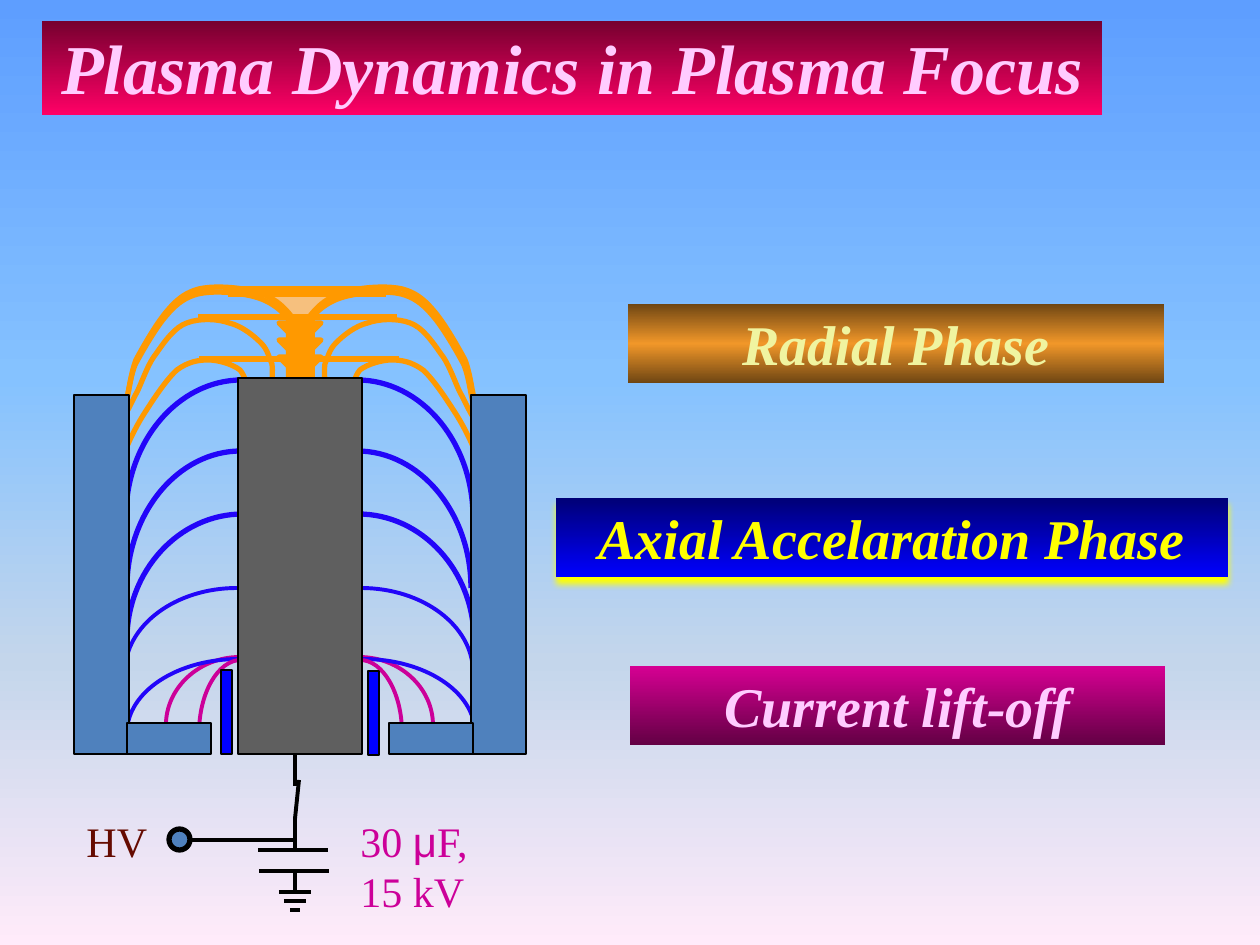
from copy import deepcopy
from dataclasses import dataclass

from lxml import etree
from pptx import Presentation
from pptx.dml.color import RGBColor
from pptx.enum.shapes import MSO_CONNECTOR, MSO_SHAPE
from pptx.enum.text import MSO_ANCHOR, PP_ALIGN
from pptx.oxml.ns import qn
from pptx.util import Emu, Pt

PX = 914400 / 126
RECT, OVAL, TRIANGLE = MSO_SHAPE.RECTANGLE, MSO_SHAPE.OVAL, MSO_SHAPE.ISOSCELES_TRIANGLE
STRAIGHT = MSO_CONNECTOR.STRAIGHT
CENTER, MIDDLE = PP_ALIGN.CENTER, MSO_ANCHOR.MIDDLE


@dataclass(frozen=True)
class Theme:
    font: str = "Times New Roman"
    symbol_font: str = "Arial"
    title_size: int = 40
    label_size: int = 32
    note_size: int = 24
    orange: str = "FF9900"
    pale_orange: str = "F6C07E"
    blue: str = "2205F9"
    magenta: str = "CC0099"
    steel: str = "4F81BD"
    insulator: str = "0000FF"
    anode: str = "5F5F5F"
    black: str = "000000"
    brown: str = "650B01"
    pink: str = "FFCCFF"
    yellow: str = "FFFF00"
    sky: tuple = ((0, "5E9EFF"), (40, "85C2FF"), (70, "C4D6EB"), (100, "FFEBFA"))
    title_fill: tuple = ((0, "76002F"), (100, "FF0066"))


THEME = Theme()


@dataclass(frozen=True)
class Box:
    x: int
    y: int
    w: int
    h: int


@dataclass(frozen=True)
class Sheet:
    """Right half of a plasma sheet; its left half is at mirror - x."""
    points: tuple
    mirror: int
    color: str
    width: float = 3


@dataclass(frozen=True)
class Phase:
    text: str
    box: Box
    color: str
    stops: tuple
    glow: str = ""


def arc(x0: int, x1: int, top: int, bottom: int) -> tuple:
    """Cubic control points of a quarter ellipse."""
    return ((x0, top), (round(x0 + 0.55 * (x1 - x0)), top),
            (x1, round(bottom - 0.55 * (bottom - top))), (x1, bottom))


OUTER = ((306, 325), (311, 318), (318, 310), (326, 305), (335, 299), (345, 296), (358, 294),
         (370, 292), (388, 291), (401, 294), (412, 297), (421, 302), (432, 315),
         (442, 326), (456, 350), (464, 365), (470, 381), (471, 399), (474, 406))
MIDDLE_SHEET = ((325, 386), (325, 378), (324, 372), (325, 364), (328, 358), (329, 350),
                (336, 343), (343, 336), (355, 326), (368, 323), (379, 319), (397, 318),
                (410, 323), (422, 327), (432, 341), (441, 354), (450, 365), (456, 386),
                (462, 396), (467, 406), (470, 412), (473, 417))
INNER = ((350, 401), (352, 389), (354, 377), (360, 370), (368, 364), (382, 360), (392, 360),
         (402, 360), (412, 362), (423, 370), (433, 379), (445, 397), (454, 411),
         (462, 423), (469, 437), (475, 451))
RADIAL_SHEETS = (
    Sheet(OUTER, 599, THEME.orange),
    Sheet(tuple((x + 1, y - 5) for x, y in OUTER), 601, THEME.orange),
    Sheet(MIDDLE_SHEET, 597, THEME.orange),
    Sheet(INNER, 600, THEME.orange),
)
AXIAL_SHEETS = (
    Sheet(arc(357, 471, 451, 588), 598, THEME.blue),
    Sheet(arc(361, 473, 588, 672), 598, THEME.blue, 2.25),
    Sheet(arc(359, 433, 657, 725), 599, THEME.magenta, 2.25),
    Sheet(arc(357, 473, 380, 517), 599, THEME.blue),
    Sheet(arc(358, 474, 514, 640), 601, THEME.blue),
    Sheet(arc(363, 475, 659, 733), 602, THEME.blue, 2.25),
    Sheet(arc(360, 402, 660, 733), 601, THEME.magenta, 2.25),
)
SHEET_TOPS = ((228, 386, 294), (228, 386, 289), (198, 397, 317), (199, 399, 359))
ELECTRODES = (
    (Box(238, 378, 124, 376), THEME.anode),
    (Box(74, 395, 55, 359), THEME.steel),
    (Box(471, 395, 55, 359), THEME.steel),
    (Box(127, 723, 84, 31), THEME.steel),
    (Box(389, 723, 84, 31), THEME.steel),
    (Box(221, 670, 11, 84), THEME.insulator),
    (Box(368, 671, 11, 84), THEME.insulator),
)
CIRCUIT = (
    (295, 754, 295, 786), (295, 819, 295, 850), (258, 850, 328, 850), (259, 871, 329, 871),
    (295, 871, 295, 892), (279, 892, 311, 892), (284, 901, 306, 901), (295, 819, 299, 780),
    (290, 910, 300, 910), (295, 840, 190, 840),
)
PHASES = (
    Phase("Current lift-off", Box(630, 666, 535, 79), THEME.pink,
          ((0, "D60093"), (100, "630044"))),
    Phase("Axial Accelaration Phase", Box(556, 498, 672, 79), THEME.yellow,
          ((0, "000076"), (100, "0000FF")), glow=THEME.yellow),
    Phase("Radial Phase", Box(628, 304, 536, 79), "F0F4A0",
          ((0, "6F4613"), (50, "F19729"), (100, "6F4613"))),
)


def px(n: int) -> Emu:
    return Emu(round(n * PX))


def emu_box(box: Box) -> tuple:
    return px(box.x), px(box.y), px(box.w), px(box.h)


def set_gradient(fill, owner, stops: tuple) -> None:
    """Give a fill inside the owner element a top-to-bottom gradient."""
    fill.gradient()
    fill.gradient_angle = 270
    gs_list = next(owner.iter(qn("a:gsLst")))
    for _ in stops[2:]:
        gs_list.append(deepcopy(gs_list[-1]))
    for stop, (position, color) in zip(fill.gradient_stops, stops):
        stop.position = position / 100
        stop.color.rgb = RGBColor.from_string(color)


def set_line(line, color: str, width: float) -> None:
    line.color.rgb = RGBColor.from_string(color)
    line.width = Pt(width)


def add_shape(slide, kind, box: Box, fill: str = "", line: str = "", width: float = 0.75):
    sp = slide.shapes.add_shape(kind, *emu_box(box))
    sp.shadow.inherit = False
    if fill:
        sp.fill.solid()
        sp.fill.fore_color.rgb = RGBColor.from_string(fill)
    if line:
        set_line(sp.line, line, width)
    else:
        sp.line.fill.background()
    return sp


def add_funnel(slide, box: Box, line: str, width: float) -> None:
    sp = add_shape(slide, TRIANGLE, box, THEME.pale_orange, line, width)
    sp._element.spPr.xfrm.set("flipV", "1")


def add_line(slide, ends: tuple, color: str, width: float) -> None:
    line = slide.shapes.add_connector(STRAIGHT, *map(px, ends))
    set_line(line.line, color, width)
    etree.SubElement(line._element.spPr, qn("a:effectLst"))


def add_curve(slide, points: tuple, color: str, width: float) -> None:
    """Draw an open chain of cubic curves through its control points."""
    builder = slide.shapes.build_freeform(*points[0], scale=PX)
    builder.add_line_segments(points[1:], close=False)
    sp = builder.convert_to_shape()
    path = next(sp._element.iter(qn("a:path")))
    segments = path.findall(qn("a:lnTo"))
    for i in range(0, len(segments), 3):
        bezier = etree.SubElement(path, qn("a:cubicBezTo"))
        for segment in segments[i:i + 3]:
            bezier.append(segment[0])
            path.remove(segment)
    sp.fill.background()
    sp.shadow.inherit = False
    set_line(sp.line, color, width)


def add_sheet(slide, sheet: Sheet) -> None:
    left = tuple((sheet.mirror - x, y) for x, y in sheet.points)
    for points in (sheet.points, left):
        add_curve(slide, points, sheet.color, sheet.width)


def set_font(font, size: int, color: str, strong: bool = False) -> None:
    font.name, font.size = THEME.font, Pt(size)
    font.bold = font.italic = strong
    font.color.rgb = RGBColor.from_string(color)


def set_heading(sp, text: str, size: int, color: str) -> None:
    tf = sp.text_frame
    tf.text, tf.word_wrap, tf.vertical_anchor = text, True, MIDDLE
    p = tf.paragraphs[0]
    p.alignment = CENTER
    set_font(p.font, size, color, strong=True)


def add_phase(slide, phase: Phase) -> None:
    sp = add_shape(slide, RECT, phase.box)
    set_gradient(sp.fill, sp._element, phase.stops)
    set_heading(sp, phase.text, THEME.label_size, phase.color)
    if phase.glow:
        effects = sp._element.spPr.find(qn("a:effectLst"))
        shadow = etree.SubElement(effects, qn("a:outerShdw"), blurRad=str(Pt(4)),
                                  dist=str(Pt(4)), dir="5400000", algn="ctr", rotWithShape="0")
        etree.SubElement(shadow, qn("a:srgbClr"), val=phase.glow)


def add_note(slide, box: Box, runs: tuple, color: str) -> None:
    tf = slide.shapes.add_textbox(*emu_box(box)).text_frame
    tf.word_wrap = True
    p = tf.paragraphs[0]
    set_font(p.font, THEME.note_size, color)
    for text, font in runs:
        r = p.add_run()
        r.text, r.font.name = text, font


def add_radial_phase(slide) -> None:
    add_funnel(slide, Box(262, 295, 73, 32), THEME.pale_orange, 0.75)
    for y in (323, 340, 357):
        add_funnel(slide, Box(279, y, 42, 21), THEME.orange, 3)
    add_funnel(slide, Box(263, 290, 73, 32), THEME.pale_orange, 0.75)
    for sheet in RADIAL_SHEETS:
        add_sheet(slide, sheet)
    add_shape(slide, RECT, Box(286, 317, 29, 64), THEME.orange)
    for x0, x1, y in SHEET_TOPS:
        add_line(slide, (x0, y, x1, y), THEME.orange, 3)


def add_circuit(slide) -> None:
    for ends in CIRCUIT:
        add_line(slide, ends, THEME.black, 2.25)
    add_shape(slide, OVAL, Box(169, 829, 21, 21), THEME.steel, THEME.black, 3)
    add_note(slide, Box(74, 809, 95, 63), (("HV", THEME.font),), THEME.brown)
    add_note(slide, Box(348, 809, 179, 113),
             (("30 ", THEME.font), ("μ", THEME.symbol_font), ("F, 15 kV", THEME.font)),
             THEME.magenta)


def main() -> None:
    prs = Presentation()
    prs.slide_width, prs.slide_height = px(1260), px(945)
    slide = prs.slides.add_slide(prs.slide_layouts[5])
    set_gradient(slide.background.fill, slide._element, THEME.sky)

    title = slide.shapes.title
    title.left, title.top, title.width, title.height = emu_box(Box(42, 21, 1060, 94))
    set_gradient(title.fill, title._element, THEME.title_fill)
    set_heading(title, "Plasma Dynamics in Plasma Focus", THEME.title_size, THEME.pink)
    title.text_frame.vertical_anchor = MSO_ANCHOR.BOTTOM

    add_radial_phase(slide)
    for sheet in AXIAL_SHEETS:
        add_sheet(slide, sheet)
    for box, fill in ELECTRODES:
        add_shape(slide, RECT, box, fill, THEME.black)
    add_circuit(slide)
    for phase in PHASES:
        add_phase(slide, phase)
    prs.save("out.pptx")


if __name__ == "__main__":
    main()
